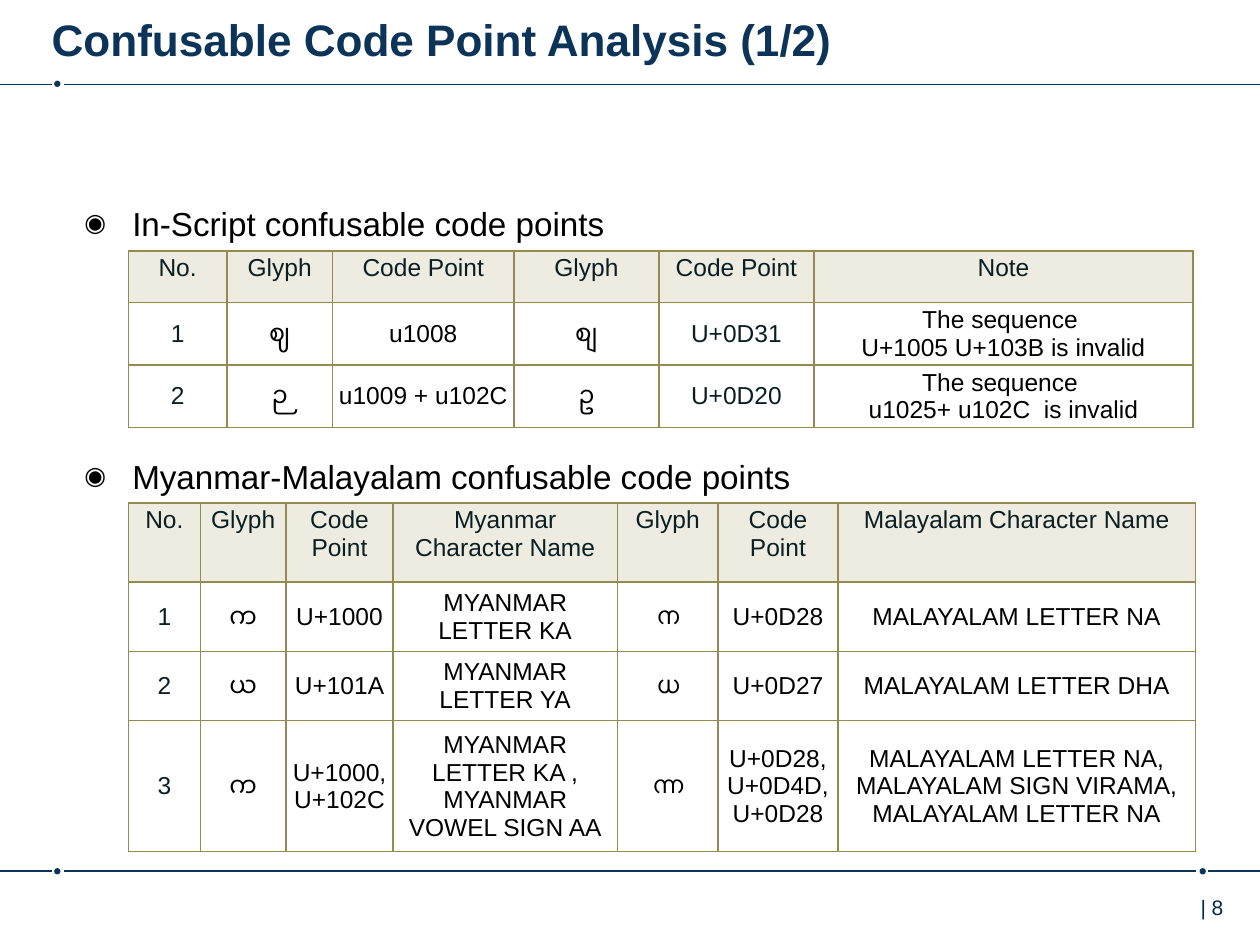
from lxml import etree
from pptx import Presentation
from pptx.dml.color import RGBColor
from pptx.enum.shapes import MSO_CONNECTOR, MSO_SHAPE
from pptx.enum.text import MSO_ANCHOR, MSO_AUTO_SIZE, PP_ALIGN
from pptx.oxml.ns import qn
from pptx.util import Inches, Pt

STRAIGHT = MSO_CONNECTOR.STRAIGHT
OVAL = MSO_SHAPE.OVAL
TOP, MIDDLE = MSO_ANCHOR.TOP, MSO_ANCHOR.MIDDLE
LEFT, CENTER = PP_ALIGN.LEFT, PP_ALIGN.CENTER
NO_FIT = MSO_AUTO_SIZE.NONE

COLORS = {
    "navy": "0C3458",
    "number": "002B49",
    "label": "0A1F24",
    "black": "000000",
    "header": "EEECE1",
    "border": "948A54",
}

IN_SCRIPT = [
    ["No.", "Glyph", "Code Point", "Glyph", "Code Point", "Note"],
    ["1", "ဈ", "u1008", "စျ", "U+0D31", "The sequence \nU+1005 U+103B is invalid"],
    ["2", "ဉာ", "u1009 + u102C", "ဥာ", "U+0D20", "The sequence \nu1025+ u102C \u00a0is invalid"],
]

CROSS_SCRIPT = [
    ["No.", "Glyph", "Code Point", "Myanmar Character Name", "Glyph", "Code Point",
     "Malayalam Character Name"],
    ["1", "က", "U+1000", "MYANMAR LETTER KA", "ന", "U+0D28", "MALAYALAM LETTER NA"],
    ["2", "ယ", "U+101A", "MYANMAR LETTER YA", "ധ", "U+0D27", "MALAYALAM LETTER DHA"],
    ["3", "ကာ", "U+1000,\nU+102C", "MYANMAR LETTER KA ,\nMYANMAR VOWEL SIGN AA", "ന്ന",
     "U+0D28,\nU+0D4D,\nU+0D28",
     "MALAYALAM LETTER NA,\nMALAYALAM SIGN VIRAMA,\nMALAYALAM LETTER NA"],
]


class Deck:
    """Holds the style and the current slide, and draws each kind of element."""

    def __init__(self, prs, font="Arial"):
        self.font = font
        self.s = prs.slides.add_slide(prs.slide_layouts[5])

    def color(self, name):
        return RGBColor.from_string(COLORS[name])

    def run(self, p, text, size, color, bold=False):
        r = p.add_run()
        r.text = text
        r.font.name = self.font
        r.font.size = Pt(size)
        r.font.bold = bold
        r.font.color.rgb = self.color(color)

    def frame(self, tf, left, top):
        tf.word_wrap = True
        tf.auto_size = NO_FIT
        tf.vertical_anchor = TOP
        tf.margin_left = tf.margin_right = Inches(left)
        tf.margin_top = tf.margin_bottom = Inches(top)

    def title(self, text):
        sp = self.s.shapes.title
        sp.left, sp.top = Inches(0.41), Inches(0.05)
        sp.width, sp.height = Inches(8.76), Inches(0.49)
        self.frame(sp.text_frame, 0, 0.05)
        p = sp.text_frame.paragraphs[0]
        p.alignment = LEFT
        self.run(p, text, 25.2, "navy", True)

    def dot(self, x, y, size=0.05):
        sp = self.s.shapes.add_shape(OVAL, Inches(x), Inches(y), Inches(size), Inches(size))
        sp.shadow.inherit = False
        sp.fill.solid()
        sp.fill.fore_color.rgb = self.color("navy")
        sp.line.fill.background()

    def line(self, x1, x2, y):
        sp = self.s.shapes.add_connector(STRAIGHT, Inches(x1), Inches(y), Inches(x2), Inches(y))
        sp.line.color.rgb = self.color("navy")
        sp.line.width = Pt(1)
        etree.SubElement(sp.element.spPr, qn("a:effectLst"))

    def page_number(self, text):
        sp = self.s.shapes.add_textbox(Inches(9.43), Inches(7.05), Inches(0.57), Inches(0.4))
        self.frame(sp.text_frame, 0.1, 0.05)
        self.run(sp.text_frame.paragraphs[0], text, 12, "number")

    def bullet(self, text, y):
        sp = self.s.shapes.add_textbox(Inches(0.67), Inches(y), Inches(8.65), Inches(0.73))
        self.frame(sp.text_frame, 0, 0)
        p = sp.text_frame.paragraphs[0]
        pPr = p._p.get_or_add_pPr()
        pPr.set("marL", str(Inches(0.38)))
        pPr.set("indent", str(-Inches(0.38)))
        buClr = etree.SubElement(pPr, qn("a:buClr"))
        etree.SubElement(buClr, qn("a:srgbClr"), val=COLORS["black"])
        etree.SubElement(pPr, qn("a:buSzPct"), val="75000")
        etree.SubElement(pPr, qn("a:buFont"), typeface=self.font)
        etree.SubElement(pPr, qn("a:buChar"), char="◉")
        self.run(p, text, 19, "black")

    def borders(self, cell):
        tcPr = cell._tc.get_or_add_tcPr()
        for side in ("lnL", "lnR", "lnT", "lnB"):
            ln = etree.SubElement(tcPr, qn(f"a:{side}"), w=str(Pt(1)))
            fill = etree.SubElement(ln, qn("a:solidFill"))
            etree.SubElement(fill, qn("a:srgbClr"), val=COLORS["border"])

    def cell(self, cell, text, color, header):
        self.borders(cell)
        if header:
            cell.fill.solid()
            cell.fill.fore_color.rgb = self.color("header")
        else:
            cell.fill.background()
        cell.vertical_anchor = TOP if header else MIDDLE
        cell.margin_left = cell.margin_right = Inches(0.03)
        cell.margin_top = cell.margin_bottom = Inches(0.03)
        tf = cell.text_frame
        for i, part in enumerate(text.split("\n")):
            p = tf.add_paragraph() if i else tf.paragraphs[0]
            p.alignment = CENTER
            self.run(p, part, 14, color)

    def table(self, y, widths, heights, rows, label_cols):
        sp = self.s.shapes.add_table(len(rows), len(widths), Inches(1.02), Inches(y),
                                     Inches(sum(widths)), Inches(sum(heights)))
        table = sp.table
        table.first_row = table.horz_banding = False
        for col, width in zip(table.columns, widths):
            col.width = Inches(width)
        for row, height in zip(table.rows, heights):
            row.height = Inches(height)
        for i, row in enumerate(rows):
            for j, text in enumerate(row):
                color = "label" if i == 0 or j in label_cols else "black"
                self.cell(table.cell(i, j), text, color, i == 0)


def main():
    prs = Presentation()
    prs.slide_width, prs.slide_height = Inches(10), Inches(7.5)
    deck = Deck(prs)

    for x, y in ((0.43, 0.64), (0.43, 6.89), (9.52, 6.89)):
        deck.dot(x, y)
    for x1, x2, y in ((0, 0.41, 0.67), (0.51, 10, 0.67),
                      (0, 0.41, 6.91), (0.51, 9.49, 6.91), (9.59, 10, 6.91)):
        deck.line(x1, x2, y)
    deck.page_number("| 8")

    deck.title("Confusable Code Point Analysis (1/2)")
    deck.bullet("In-Script confusable code points", 1.61)
    deck.table(1.99, [0.78, 0.84, 1.44, 1.15, 1.23, 3.01], [0.41, 0.49, 0.49],
               IN_SCRIPT, (0, 4))
    deck.bullet("Myanmar-Malayalam confusable code points", 3.62)
    deck.table(3.99, [0.57, 0.68, 0.85, 1.78, 0.8, 0.95, 2.84], [0.63, 0.55, 0.55, 1.04],
               CROSS_SCRIPT, (0,))
    prs.save("out.pptx")


if __name__ == "__main__":
    main()
